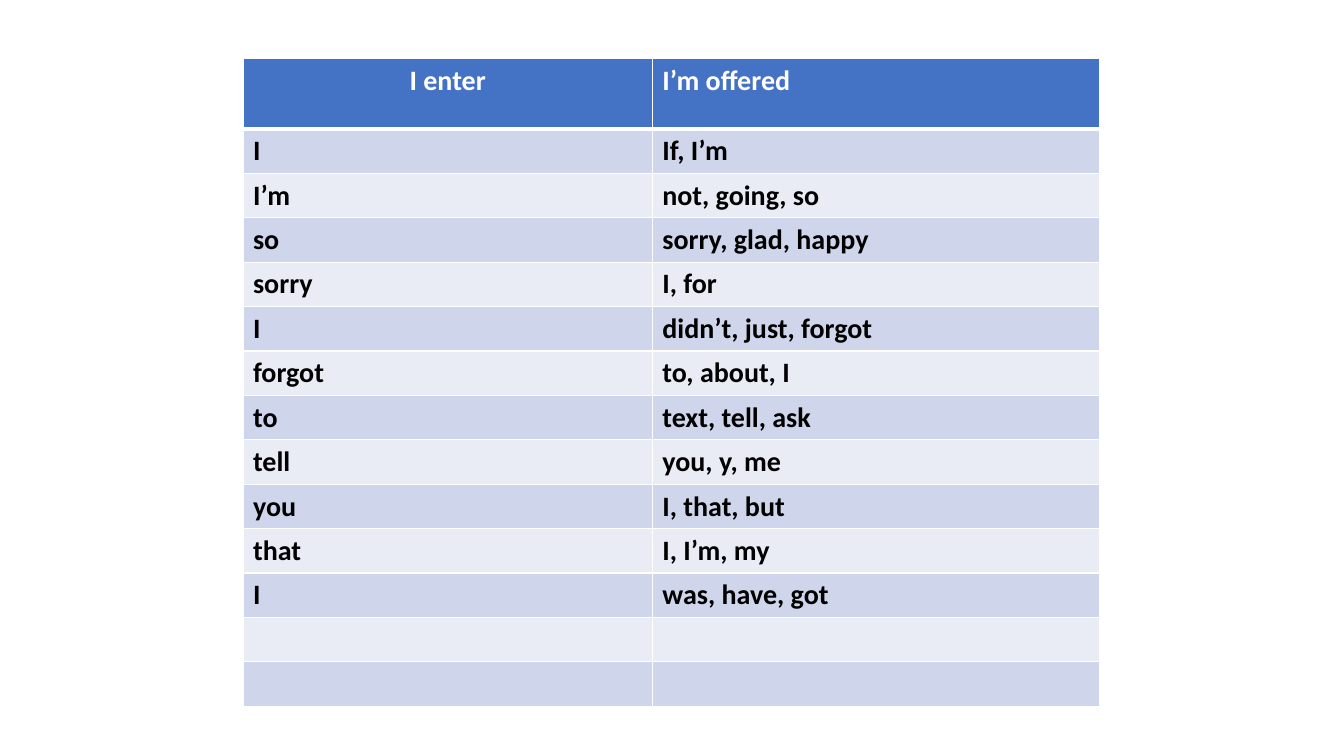
from dataclasses import dataclass

from lxml import etree
from pptx import Presentation
from pptx import util as u
from pptx.dml import color
from pptx.enum import text
from pptx.oxml import ns
from pptx.table import _Cell


@dataclass(frozen=True)
class Theme:
    font: str = "Calibri"
    size: int = 20
    header_fill: str = "4472C4"
    header_text: str = "FFFFFF"
    body_text: str = "000000"
    bands: tuple[str, str] = ("CFD5EA", "E9EBF5")
    border: str = "FFFFFF"
    thin: int = 1
    thick: int = 3


@dataclass(frozen=True)
class Suggestion:
    entered: str = ""
    offered: str = ""


THEME = Theme()
HEADER = Suggestion("I enter", "I’m offered")
SUGGESTIONS = [
    Suggestion("I", "If, I’m"),
    Suggestion("I’m", "not, going, so"),
    Suggestion("so", "sorry, glad, happy"),
    Suggestion("sorry", "I, for"),
    Suggestion("I", "didn’t, just, forgot"),
    Suggestion("forgot", "to, about, I"),
    Suggestion("to", "text, tell, ask"),
    Suggestion("tell", "you, y, me"),
    Suggestion("you", "I, that, but"),
    Suggestion("that", "I, I’m, my"),
    Suggestion("I", "was, have, got"),
    Suggestion(),
    Suggestion(),
]
COL_WIDTHS = (4.06, 4.44)
HEADER_HEIGHT = 0.7
ROW_HEIGHT = 0.44


def add_border(cell: _Cell, side: str, width: int) -> None:
    tcPr = cell._tc.get_or_add_tcPr()
    ln = etree.SubElement(tcPr, ns.qn(f"a:ln{side}"), w=str(u.Pt(width)))
    fill = etree.SubElement(ln, ns.qn("a:solidFill"))
    etree.SubElement(fill, ns.qn("a:srgbClr"), val=THEME.border)


def format_cell(cell: _Cell, value: str, row: int) -> None:
    is_header = row == 0
    thick_side = {0: "B", 1: "T"}.get(row)
    for side in "LRTB":
        add_border(cell, side, THEME.thick if side == thick_side else THEME.thin)
    cell.fill.solid()
    fill = THEME.header_fill if is_header else THEME.bands[(row - 1) % 2]
    cell.fill.fore_color.rgb = color.RGBColor.from_string(fill)
    p = cell.text_frame.paragraphs[0]
    p.text = value
    for r in p.runs:
        r.font.name = THEME.font
        r.font.size = u.Pt(THEME.size)
        r.font.bold = True
        text_color = THEME.header_text if is_header else THEME.body_text
        r.font.color.rgb = color.RGBColor.from_string(text_color)


def main() -> None:
    prs = Presentation()
    prs.slide_width, prs.slide_height = u.Inches(13.33), u.Inches(7.5)
    s = prs.slides.add_slide(prs.slide_layouts[6])
    rows = [HEADER, *SUGGESTIONS]
    height = HEADER_HEIGHT + ROW_HEIGHT * len(SUGGESTIONS)
    table = s.shapes.add_table(
        len(rows), len(COL_WIDTHS), u.Inches(2.41), u.Inches(0.58),
        u.Inches(sum(COL_WIDTHS)), u.Inches(height),
    ).table
    for column, width in zip(table.columns, COL_WIDTHS):
        column.width = u.Inches(width)
    for i, suggestion in enumerate(rows):
        table.rows[i].height = u.Inches(ROW_HEIGHT if i else HEADER_HEIGHT)
        for j, value in enumerate((suggestion.entered, suggestion.offered)):
            format_cell(table.cell(i, j), value, i)
    table.cell(0, 0).text_frame.paragraphs[0].alignment = text.PP_ALIGN.CENTER
    prs.save("out.pptx")


if __name__ == "__main__":
    main()
